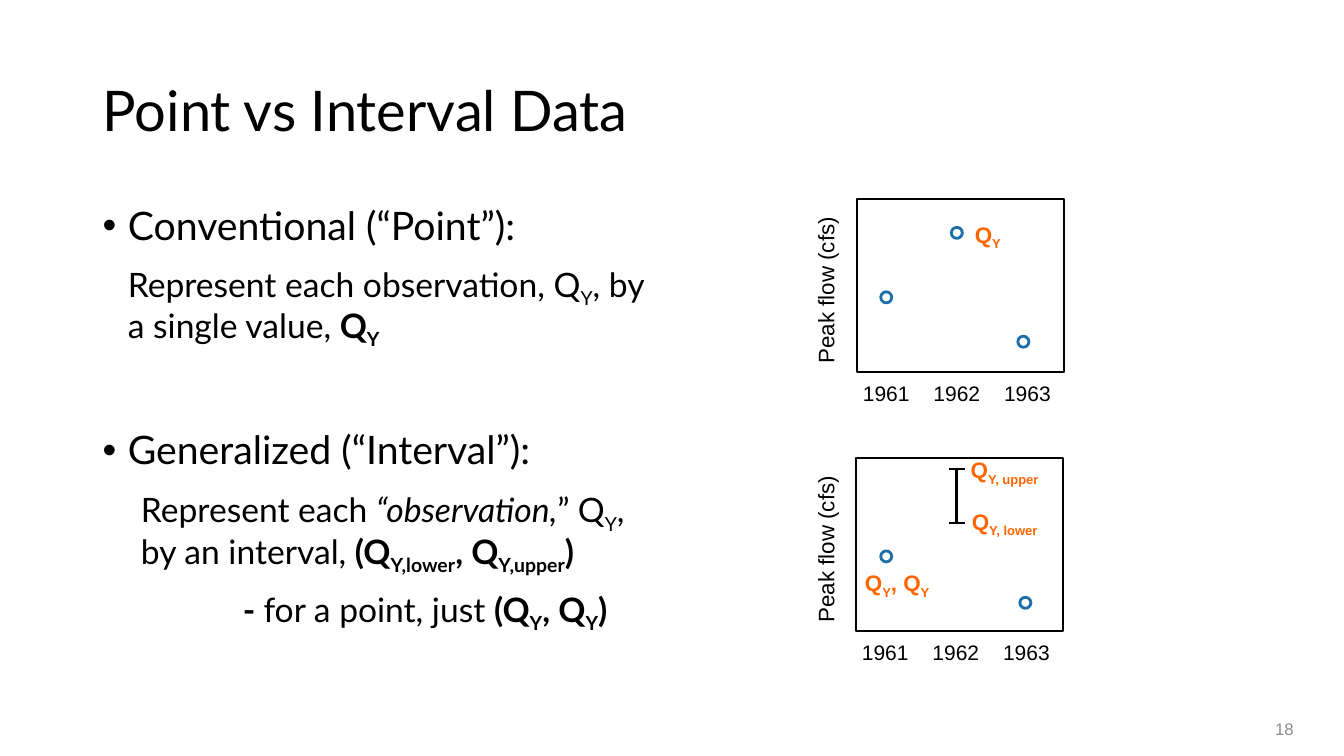
from pptx import Presentation
from pptx import util as u
from pptx.dml.color import RGBColor
from pptx.enum import shapes, text
from pptx.oxml import parse_xml
from pptx.oxml.ns import nsdecls, qn

COLORS = {"black": "000000", "orange": "FF6600", "blue": "1D6FA9", "gray": "8C8C8C", "white": "FFFFFF"}
TITLE = "Point vs Interval Data"
BODY = [
    dict(size=28, before=10, left=0.25, bullet=True, runs=[("Conventional (“Point”):", "")]),
    dict(size=24, before=11, left=0.25, runs=[
        ("Represent each observation, Q", ""), ("Y", "s"), (", by a single value, ", ""), ("Q", "b"), ("Y", "bs")]),
    dict(size=28, before=60, left=0.25, bullet=True, runs=[("Generalized (“Interval”):", "")]),
    dict(size=24, before=12, left=0.38, runs=[
        ("Represent each ", ""), ("“observation,", "i"), ("” Q", ""), ("Y", "s"), (", by an interval, ", ""),
        ("(Q", "b"), ("Y,lower", "bs"), (", Q", "b"), ("Y,upper", "bs"), (")", "b")]),
    dict(size=24, before=12, left=1.39, runs=[
        ("- ", "b"), ("for a point, just ", ""), ("(Q", "b"), ("Y", "bs"), (", Q", "b"), ("Y", "bs"), (")", "b")]),
]
YEARS = ["1961", "1962", "1963"]
YEAR_STEP = 0.7
AXIS = "Peak flow (cfs)"
PLOTS = [
    dict(left=8.5, top=1.97, points=[(8.79, 2.95), (9.49, 2.31), (10.15, 3.39)],
         labels=[(9.57, 2.14, 0.53, [("Q", "b"), ("Y", "bs")])]),
    dict(left=8.49, top=4.54, points=[(8.79, 5.52), (10.17, 5.98)],
         labels=[(9.53, 4.48, 1.03, [("Q", "b"), ("Y, upper", "bs")]),
                 (9.54, 4.99, 1.03, [("Q", "b"), ("Y, lower", "bs")]),
                 (8.48, 5.6, 0.95, [("Q", "b"), ("Y", "bs"), (", Q", "b"), ("Y", "bs")])]),
]
PLOT_W, PLOT_H, DOT = 2.05, 1.72, 0.11
BAR_X, BAR_TOP, BAR_BOTTOM, CAP = 9.49, 4.65, 5.19, 0.08


def color(name):
    return RGBColor.from_string(COLORS[name])


def add_runs(p, runs, size, font="Arial", fill="black"):
    for words, style in runs:
        r = p.add_run()
        r.text = words
        r.font.size = u.Pt(size)
        r.font.name = font
        r.font.color.rgb = color(fill)
        r.font.bold = "b" in style
        r.font.italic = "i" in style
        if "s" in style:
            r._r.get_or_add_rPr().set("baseline", "-25000")


def add_text(s, box, runs, size, fill="black", wrap=True):
    sp = s.shapes.add_textbox(*map(u.Inches, box))
    sp.text_frame.word_wrap = wrap
    add_runs(sp.text_frame.paragraphs[0], runs, size, fill=fill)
    return sp


def add_outline(s, kind, box, line, width):
    sp = s.shapes.add_shape(kind, *map(u.Inches, box))
    sp.shadow.inherit = False
    sp.fill.background()
    sp.line.color.rgb = color(line)
    sp.line.width = u.Pt(width)


def add_line(s, x1, y1, x2, y2, width):
    c = s.shapes.add_connector(shapes.MSO_CONNECTOR.STRAIGHT, *map(u.Inches, (x1, y1, x2, y2)))
    c.line.color.rgb = color("black")
    c.line.width = u.Pt(width)
    c._element.spPr.append(parse_xml(f"<a:effectLst {nsdecls('a')}/>"))


def add_body(s):
    tf = s.shapes.add_textbox(*map(u.Inches, (0.92, 2, 5.67, 4.76))).text_frame
    tf.word_wrap = True
    for i, item in enumerate(BODY):
        p = tf.add_paragraph() if i else tf.paragraphs[0]
        p.line_spacing = 0.9
        p.space_before = u.Pt(item["before"])
        pPr = p._p.get_or_add_pPr()
        pPr.set("marL", str(u.Inches(item["left"])))
        if item.get("bullet"):
            pPr.set("indent", str(-u.Inches(item["left"])))
            pPr.append(parse_xml(f'<a:buFont {nsdecls("a")} typeface="Arial"/>'))
            pPr.append(parse_xml(f'<a:buChar {nsdecls("a")} char="•"/>'))
        add_runs(p, item["runs"], item["size"], "Lato")


def add_plot(s, plot):
    left, top = plot["left"], plot["top"]
    add_outline(s, shapes.MSO_SHAPE.RECTANGLE, (left, top, PLOT_W, PLOT_H), "black", 1.5)
    sp = add_text(s, (left - 0.04, top + 1.76, 2.07, 0.35), [("\t".join(YEARS), "")], 15, wrap=False)
    tabs = "".join(f'<a:tab pos="{u.Inches(YEAR_STEP * i)}" algn="l"/>' for i in range(1, len(YEARS)))
    pPr = sp.text_frame.paragraphs[0]._p.get_or_add_pPr()
    pPr.append(parse_xml(f"<a:tabLst {nsdecls('a')}>{tabs}</a:tabLst>"))
    sp = add_text(s, (7.33, top + 0.69, 1.72, 0.37), [(AXIS, "")], 16)
    sp.rotation = 270
    for x, y in plot["points"]:
        add_outline(s, shapes.MSO_SHAPE.OVAL, (x - DOT / 2, y - DOT / 2, DOT, DOT), "blue", 2)
    for x, y, w, runs in plot["labels"]:
        add_text(s, (x, y, w, 0.37), runs, 16, "orange")


def main():
    prs = Presentation()
    prs.slide_width, prs.slide_height = u.Inches(13.33), u.Inches(7.5)
    s = prs.slides.add_slide(prs.slide_layouts[5])
    s.background.fill.solid()
    s.background.fill.fore_color.rgb = color("white")

    title = s.shapes.title
    title.left, title.top, title.width, title.height = map(u.Inches, (0.92, 0.4, 11.5, 1.45))
    tf = title.text_frame
    tf.vertical_anchor = text.MSO_ANCHOR.MIDDLE
    p = tf.paragraphs[0]
    p.alignment = text.PP_ALIGN.LEFT
    p.line_spacing = 0.9
    add_runs(p, [(TITLE, "")], 40, "Lato")

    add_body(s)
    for plot in PLOTS:
        add_plot(s, plot)
    for y in (BAR_TOP, BAR_BOTTOM):
        add_line(s, BAR_X - CAP, y, BAR_X + CAP, y, 1.25)
    add_line(s, BAR_X, BAR_TOP, BAR_X, BAR_BOTTOM, 2)

    sp = add_text(s, (12.3, 7.06, 0.88, 0.35), [], 12)
    sp.text_frame.vertical_anchor = text.MSO_ANCHOR.MIDDLE
    p = sp.text_frame.paragraphs[0]
    p.alignment = text.PP_ALIGN.CENTER
    add_runs(p, [("18", "")], 12, fill="gray")
    prs.save("out.pptx")


if __name__ == "__main__":
    main()
